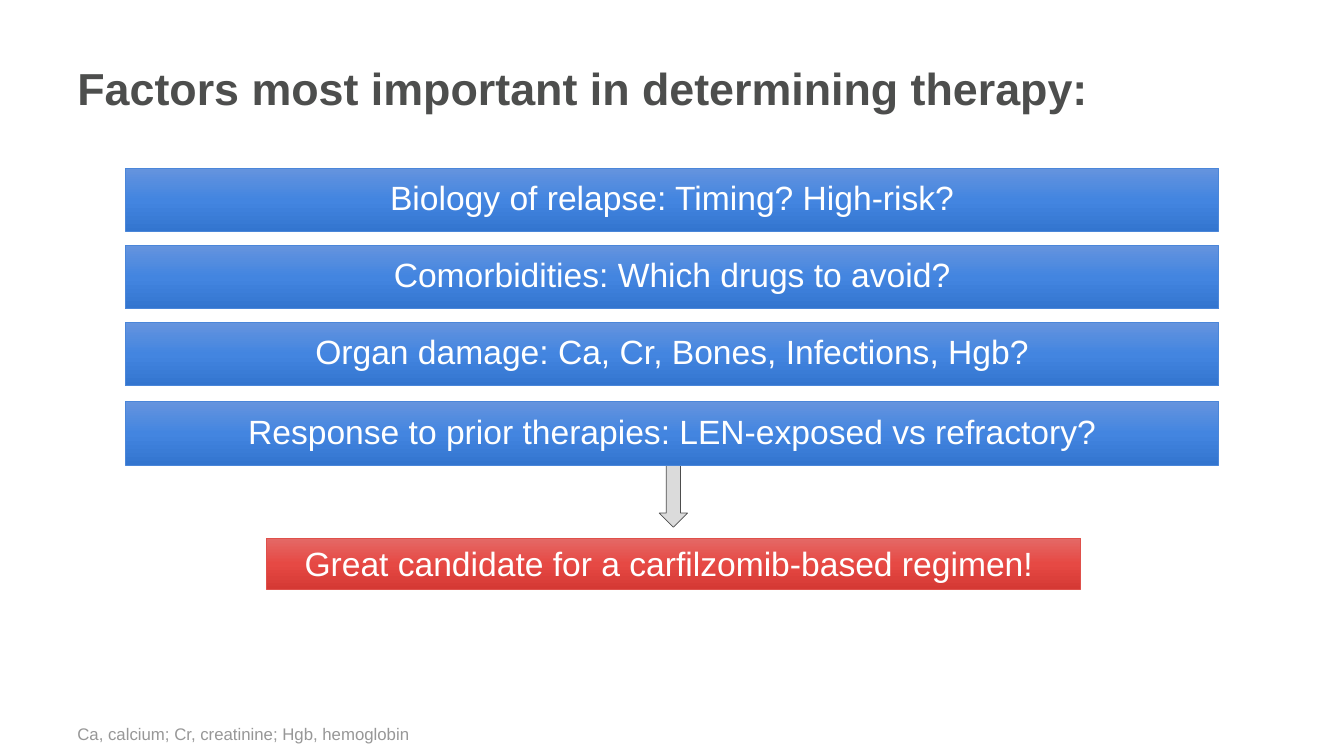
from copy import deepcopy

from pptx import Presentation
from pptx.dml.color import RGBColor
from pptx.enum.shapes import MSO_SHAPE as Shape
from pptx.enum.text import MSO_ANCHOR as Anchor, MSO_AUTO_SIZE as AutoSize, PP_ALIGN as Align
from pptx.oxml.ns import qn
from pptx.util import Pt

COLORS = {
    "title": "4D4E4D",
    "footnote": "979797",
    "white": "FFFFFF",
    "arrow": "DBDBDB",
    "arrow_line": "4D4D4D",
    "factor_line": "4A86D9",
    "factor_top": "6594DE",
    "factor_middle": "4385E0",
    "factor_bottom": "3375CF",
    "answer_line": "DF504B",
    "answer_top": "E46966",
    "answer_middle": "E64944",
    "answer_bottom": "D53934",
}
FACTORS = [
    (120, "Biology of relapse: Timing? High-risk?"),
    (175, "Comorbidities: Which drugs to avoid?"),
    (230.2, "Organ damage: Ca, Cr, Bones, Infections, Hgb?"),
    (286.8, "Response to prior therapies: LEN-exposed vs refractory?"),
]
FACTOR_FRAME = {
    "vertical_anchor": Anchor.MIDDLE,
    "word_wrap": True,
    "margin_left": Pt(18.7),
    "margin_right": Pt(18.7),
}
ANSWER_FRAME = {
    "vertical_anchor": Anchor.TOP,
    "word_wrap": True,
    "auto_size": AutoSize.SHAPE_TO_FIT_TEXT,
}


def apply_format(target, values):
    for name, value in values.items():
        setattr(target, name, value)


class SlideBuilder:
    font_name = "Arial"

    def __init__(self, slide):
        self.slide = slide

    def color(self, name):
        return RGBColor.from_string(COLORS[name])

    def fill_text(self, shape, text, size, color, frame, paragraph_format=None, bold=False):
        apply_format(shape.text_frame, frame)
        paragraph = shape.text_frame.paragraphs[0]
        paragraph.text = text
        apply_format(paragraph, paragraph_format or {})
        font = paragraph.runs[0].font
        apply_format(font, {"name": self.font_name, "size": Pt(size), "bold": bold})
        font.color.rgb = self.color(color)

    def text(self, box, text, size, color, anchor, bold=False):
        shape = self.slide.shapes.add_textbox(*map(Pt, box))
        frame = {"word_wrap": True, "vertical_anchor": anchor}
        self.fill_text(shape, text, size, color, frame, bold=bold)

    def shape(self, kind, box, line):
        shape = self.slide.shapes.add_shape(kind, *map(Pt, box))
        shape.shadow.inherit = False
        shape.line.color.rgb = self.color(line)
        shape.line.width = Pt(0.5)
        return shape

    def arrow(self, box):
        shape = self.shape(Shape.DOWN_ARROW, box, "arrow_line")
        shape.fill.solid()
        shape.fill.fore_color.rgb = self.color("arrow")

    def bar(self, box, text, palette, frame, line_spacing):
        shape = self.shape(Shape.RECTANGLE, box, f"{palette}_line")
        self.shade(shape, palette)
        paragraph_format = {"alignment": Align.CENTER, "line_spacing": line_spacing}
        self.fill_text(shape, text, 24, "white", frame, paragraph_format)

    def shade(self, shape, palette):
        shape.fill.gradient()
        shape.fill.gradient_angle = 270
        stop_list = shape.element.spPr.find(qn("a:gradFill")).find(qn("a:gsLst"))
        stop_list.append(deepcopy(stop_list[-1]))
        for index, part in enumerate(("top", "middle", "bottom")):
            stop = shape.fill.gradient_stops[index]
            stop.position = index / 2
            stop.color.rgb = self.color(f"{palette}_{part}")


def main():
    presentation = Presentation()
    presentation.slide_width, presentation.slide_height = Pt(960), Pt(540)
    builder = SlideBuilder(presentation.slides.add_slide(presentation.slide_layouts[6]))

    builder.arrow((470.9, 332, 20.2, 44.6))
    builder.text((48.2, 500.4, 846, 34.6), "Ca, calcium; Cr, creatinine; Hgb, hemoglobin",
                 12, "footnote", Anchor.BOTTOM)
    builder.text((48.2, 15.8, 846, 93.6), "Factors most important in determining therapy:",
                 32, "title", Anchor.MIDDLE, bold=True)
    for top, factor in FACTORS:
        builder.bar((89.6, top, 780.8, 45.4), factor, "factor", FACTOR_FRAME, 0.9)
    builder.bar((190.1, 384.5, 581.8, 36.3), "Great candidate for a carfilzomib-based regimen! ",
                "answer", ANSWER_FRAME, 1.0)

    presentation.save("out.pptx")


if __name__ == "__main__":
    main()
